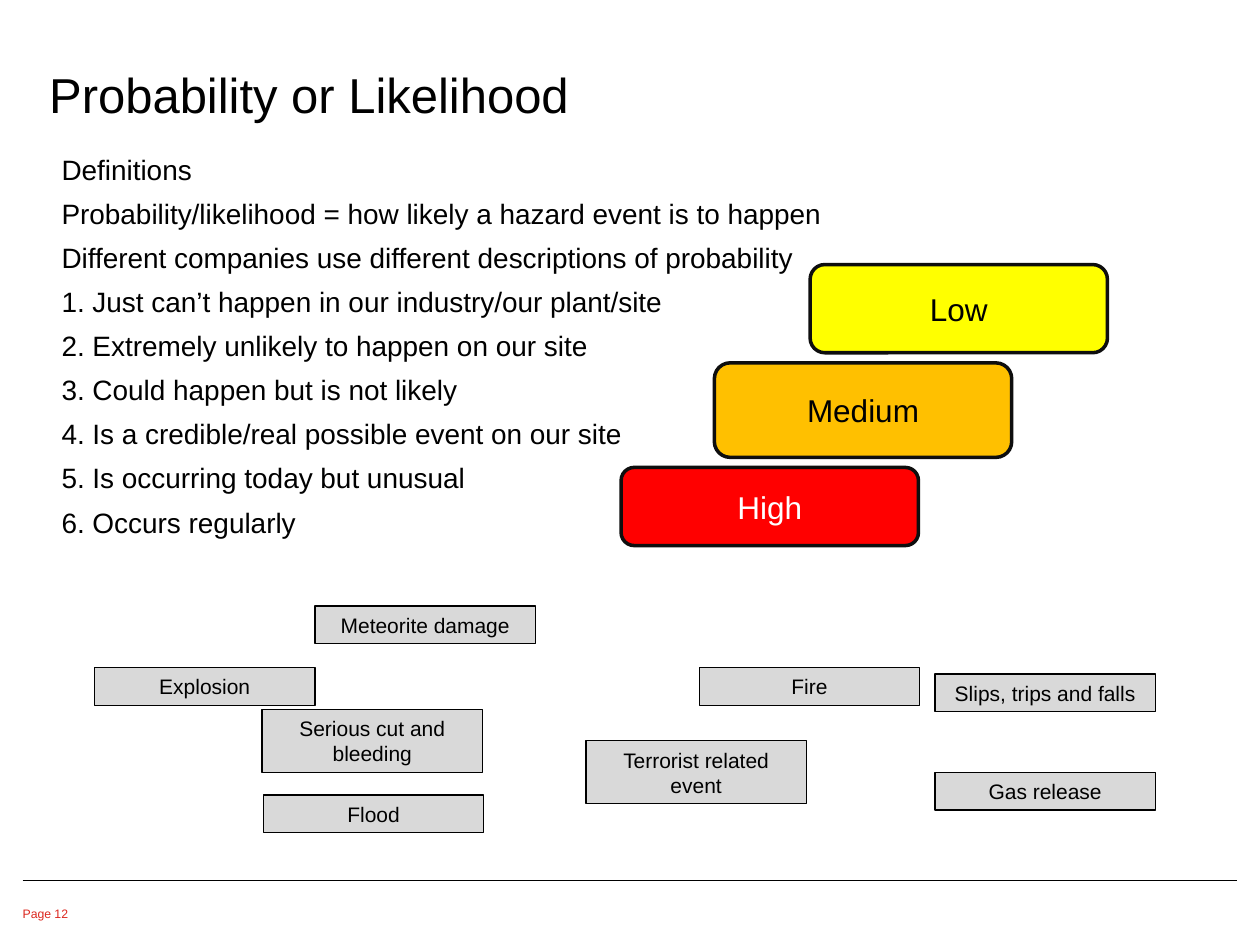
"""Build the slide that defines probability levels and lists hazard events to rate."""
from dataclasses import dataclass

from lxml import etree
from pptx import Presentation
from pptx.dml.color import RGBColor
from pptx.enum import shapes, text
from pptx.util import Inches, Pt


@dataclass(frozen=True)
class Theme:
    font: str = "Arial"
    ink: str = "000000"
    white: str = "FFFFFF"
    outline: str = "0E0E0E"
    page: str = "DC271E"
    event: str = "D9D9D9"
    low: str = "FFFF00"
    medium: str = "FFC000"
    high: str = "FF0000"
    title_size: float = 28
    level_size: float = 18
    body_size: float = 16
    event_size: float = 12
    page_size: float = 7


THEME = Theme()
TITLE = "Probability or Likelihood"
PAGE = "Page 12"
INTRODUCTION = [
    "Definitions",
    "Probability/likelihood = how likely a hazard event is to happen",
    "Different companies use different descriptions of probability",
]
SCALE = [
    "Just can’t happen in our industry/our plant/site",
    "Extremely unlikely to happen on our site",
    "Could happen but is not likely",
    "Is a credible/real possible event on our site",
    "Is occurring today but unusual",
    "Occurs regularly",
]
LEVELS = [
    ("Low", 6.43, 2.1, 0.7, THEME.low, THEME.ink),
    ("Medium", 5.67, 2.88, 0.75, THEME.medium, THEME.ink),
    ("High", 4.93, 3.71, 0.62, THEME.high, THEME.white),
]
EVENTS = [
    ("Meteorite damage", 2.5, 4.81, 1),
    ("Serious cut and bleeding", 2.08, 5.63, 2),
    ("Flood", 2.09, 6.31, 1),
    ("Terrorist related event", 4.65, 5.88, 2),
    ("Explosion", 0.75, 5.3, 1),
    ("Slips, trips and falls", 7.42, 5.35, 1),
    ("Fire", 5.55, 5.3, 1),
    ("Gas release", 7.42, 6.13, 1),
]
LEVEL_WIDTH = 2.36
EVENT_WIDTH = 1.75
EVENT_PADDING, EVENT_LINE = 0.1, 0.2


def write(shape, lines, size, color=THEME.ink, align=text.PP_ALIGN.LEFT,
          anchor=text.MSO_ANCHOR.TOP, before=0, inset=None, wrap=True):
    frame = shape.text_frame
    frame.word_wrap = wrap
    frame.auto_size = text.MSO_AUTO_SIZE.NONE
    frame.vertical_anchor = anchor
    if inset is not None:
        frame.margin_left = frame.margin_right = Inches(inset)
        frame.margin_top = frame.margin_bottom = Inches(inset)
    for index, line in enumerate(lines):
        paragraph = frame.add_paragraph() if index else frame.paragraphs[0]
        paragraph.alignment = align
        paragraph.space_before = Pt(before)
        run = paragraph.add_run()
        run.text = line
        run.font.name = THEME.font
        run.font.size = Pt(size)
        run.font.color.rgb = RGBColor.from_string(color)


def add_box(slide, kind, place, fill, line, width):
    shape = slide.shapes.add_shape(kind, *map(Inches, place))
    shape.shadow.inherit = False
    shape.fill.solid()
    shape.fill.fore_color.rgb = RGBColor.from_string(fill)
    shape.line.color.rgb = RGBColor.from_string(line)
    shape.line.width = Pt(width)
    return shape


def add_rule(slide):
    rule = slide.shapes.add_connector(
        shapes.MSO_CONNECTOR.STRAIGHT, *map(Inches, (0.18, 6.99, 9.82, 6.99)))
    rule.line.color.rgb = RGBColor.from_string(THEME.ink)
    rule.line.width = Pt(0.75)
    properties = rule.element.spPr
    namespace = properties.nsmap["a"]
    etree.SubElement(properties, f"{{{namespace}}}effectLst")


def add_title(slide):
    title = slide.shapes.title
    title.left, title.top, title.width, title.height = map(
        Inches, (0.39, -0.08, 9.36, 1.06))
    write(title, [TITLE], THEME.title_size, anchor=text.MSO_ANCHOR.BOTTOM, inset=0)


def main():
    presentation = Presentation()
    presentation.slide_width, presentation.slide_height = Inches(10), Inches(7.5)
    slide = presentation.slides.add_slide(presentation.slide_layouts[5])
    add_title(slide)
    add_rule(slide)

    page = slide.shapes.add_textbox(*map(Inches, (0.18, 7.19, 0.41, 0.15)))
    write(page, [PAGE], THEME.page_size, THEME.page, inset=0, wrap=False)

    definitions = slide.shapes.add_textbox(*map(Inches, (0.39, 1.16, 9.1, 3.2)))
    numbered = [f"{number}. {line}" for number, line in enumerate(SCALE, 1)]
    write(definitions, INTRODUCTION + numbered, THEME.body_size, before=6)

    for name, left, top, height, fill, color in LEVELS:
        box = add_box(slide, shapes.MSO_SHAPE.ROUNDED_RECTANGLE,
                      (left, top, LEVEL_WIDTH, height), fill, THEME.outline, 2)
        write(box, [name], THEME.level_size, color,
              text.PP_ALIGN.CENTER, text.MSO_ANCHOR.MIDDLE)

    for name, left, top, rows in EVENTS:
        height = EVENT_PADDING + rows * EVENT_LINE
        box = add_box(slide, shapes.MSO_SHAPE.RECTANGLE,
                      (left, top, EVENT_WIDTH, height), THEME.event, THEME.ink, 0.75)
        write(box, [name], THEME.event_size, align=text.PP_ALIGN.CENTER)

    presentation.save("out.pptx")


if __name__ == "__main__":
    main()
